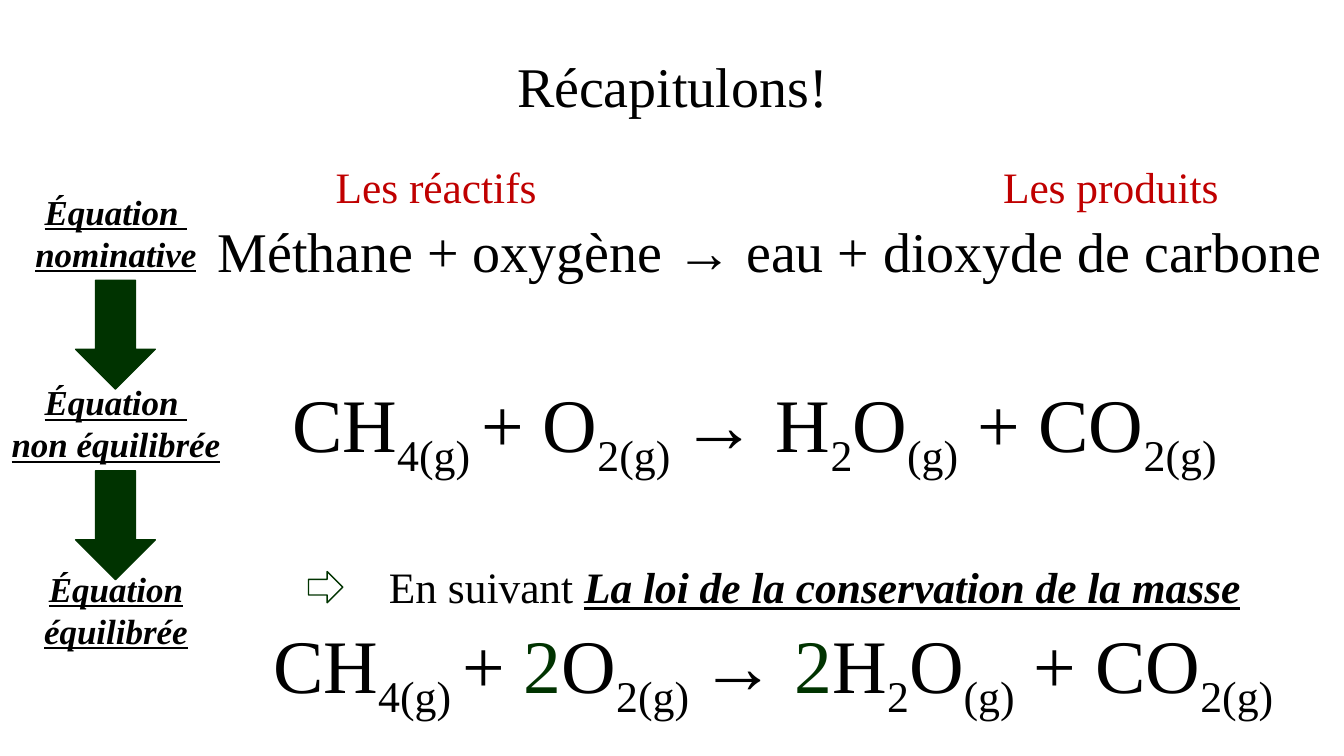
from pptx import Presentation
from pptx.dml.color import RGBColor
from pptx.enum.shapes import MSO_SHAPE
from pptx.enum.text import MSO_ANCHOR, PP_ALIGN
from pptx.util import Pt

PX = 9144  # EMU per px, 100 px to the inch
FONT = "Times New Roman"
BLACK = RGBColor(0x00, 0x00, 0x00)
WHITE = RGBColor(0xFF, 0xFF, 0xFF)
GREEN = RGBColor(0x00, 0x33, 0x00)
RED = RGBColor(0xC0, 0x00, 0x00)
LEFT, CENTER = PP_ALIGN.LEFT, PP_ALIGN.CENTER
TOP, MIDDLE = MSO_ANCHOR.TOP, MSO_ANCHOR.MIDDLE
DOWN_ARROW, RIGHT_ARROW = MSO_SHAPE.DOWN_ARROW, MSO_SHAPE.RIGHT_ARROW

PLAIN, SUBSCRIPT, COEFFICIENT, EMPHASIS = range(4)

UNBALANCED = [
    ("CH", PLAIN), ("4(g) ", SUBSCRIPT), ("+ O", PLAIN), ("2(g) ", SUBSCRIPT),
    ("→ H", PLAIN), ("2", SUBSCRIPT), ("O", PLAIN), ("(g)", SUBSCRIPT),
    (" + CO", PLAIN), ("2(g)", SUBSCRIPT),
]
BALANCED = [
    ("CH", PLAIN), ("4(g) ", SUBSCRIPT), ("+ ", PLAIN), ("2", COEFFICIENT),
    ("O", PLAIN), ("2(g) ", SUBSCRIPT), ("→ ", PLAIN), ("2", COEFFICIENT),
    ("H", PLAIN), ("2", SUBSCRIPT), ("O", PLAIN), ("(g)", SUBSCRIPT),
    (" + CO", PLAIN), ("2(g)", SUBSCRIPT),
]


def add_text(slide, box, lines, size, color=BLACK, align=LEFT, anchor=TOP, wrap=False):
    """Add a text box; each line is a list of (text, style) pairs."""
    shape = slide.shapes.add_textbox(*(length * PX for length in box))
    frame = shape.text_frame
    frame.word_wrap = wrap
    frame.vertical_anchor = anchor
    for index, line in enumerate(lines):
        paragraph = frame.add_paragraph() if index else frame.paragraphs[0]
        paragraph.alignment = align
        for text, style in line:
            run = paragraph.add_run()
            run.text = text
            font = run.font
            font.name = FONT
            font.size = Pt(size)
            font.color.rgb = GREEN if style == COEFFICIENT else color
            if style == EMPHASIS:
                font.bold = font.italic = font.underline = True
            elif style == SUBSCRIPT:
                run._r.get_or_add_rPr().set("baseline", "-25000")
    return shape


def add_arrow(slide, kind, box, fill):
    arrow = slide.shapes.add_shape(kind, *(length * PX for length in box))
    arrow.shadow.inherit = False
    arrow.fill.solid()
    arrow.fill.fore_color.rgb = fill
    arrow.line.color.rgb = GREEN
    arrow.line.width = Pt(1)


def add_title(slide, box):
    title = add_text(slide, box, [[("Récapitulons!", PLAIN)]], 40,
                     align=CENTER, anchor=MIDDLE, wrap=True)
    title.text_frame.paragraphs[0].line_spacing = 0.9


def add_steps(slide, left, top, width):
    """Stack the three equation names, joined by down arrows."""
    names = [("Équation ", "nominative"), ("Équation ", "non équilibrée"),
             ("Équation", "équilibrée")]
    pitch, label_height, arrow_width, arrow_height = 189, 94, 79, 108
    for index, name in enumerate(names):
        y = top + index * pitch
        # The last label tucks in under its arrow tip.
        label_top = y if index < 2 else y - 4
        add_text(slide, (left, label_top, width, label_height),
                 [[(line, EMPHASIS)] for line in name], 25, align=CENTER)
        if index < 2:
            add_arrow(slide, DOWN_ARROW,
                      (left + (width - arrow_width) // 2, y + label_height,
                       arrow_width, arrow_height), GREEN)


def add_word_equation(slide, left, top, width):
    for text, offset, heading_width in (("Les réactifs", 117, 222),
                                        ("Les produits", 779, 237)):
        add_text(slide, (left + offset, top, heading_width, 62),
                 [[(text, PLAIN)]], 31, RED)
    add_text(slide, (left, top + 56, width, 77),
             [[("Méthane + oxygène → eau + dioxyde de carbone", PLAIN)]], 40)


def add_balanced_equation(slide, left, top, width):
    add_arrow(slide, RIGHT_ARROW, (left + 45, top + 16, 34, 31), WHITE)
    add_text(slide, (left + 115, top, 874, 62),
             [[("En suivant ", PLAIN),
               ("La loi de la conservation de la masse", EMPHASIS)]], 31)
    add_text(slide, (left, top + 57, width, 101), [BALANCED], 54)


def main():
    presentation = Presentation()
    presentation.slide_width = 1333 * PX
    presentation.slide_height = 750 * PX
    slide = presentation.slides.add_slide(presentation.slide_layouts[6])
    add_title(slide, (92, 40, 1150, 98))
    add_steps(slide, 0, 184, 230)
    add_word_equation(slide, 206, 154, 1127)
    add_text(slide, (280, 369, 1006, 101), [UNBALANCED], 54)
    add_balanced_equation(slide, 261, 551, 1082)
    presentation.save("out.pptx")


if __name__ == "__main__":
    main()
